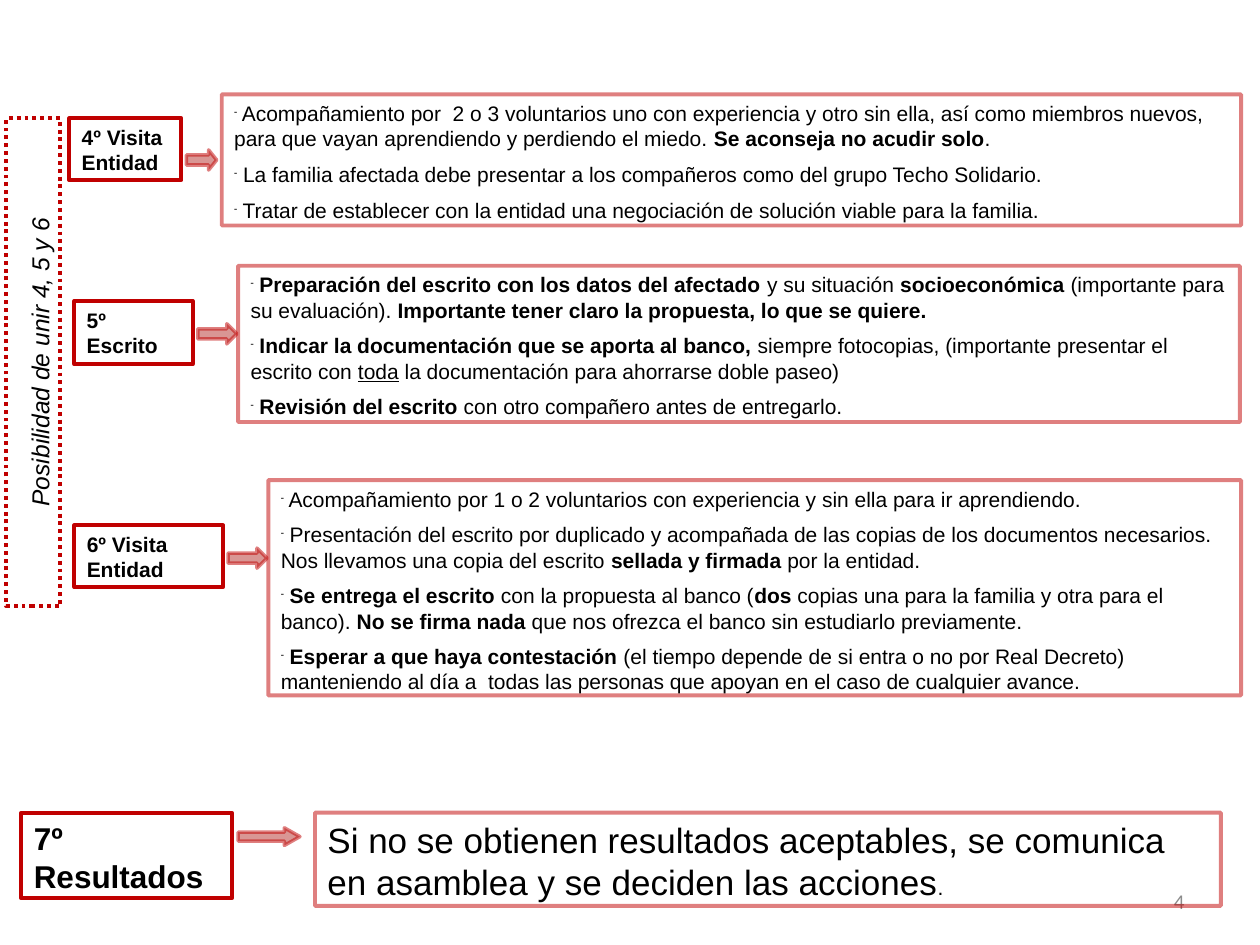
from dataclasses import dataclass
from itertools import groupby

from lxml import etree
from pptx import Presentation
from pptx import util as u
from pptx.dml.color import RGBColor
from pptx.enum import dml, shapes, text
from pptx.oxml.ns import qn

RED, PINK, BLACK, GREY = "C00000", "D99694", "000000", "8C8C8C"
BOLD, UNDERLINE, SMALL = "*", "_", "~"


@dataclass
class Area:
    left: float
    top: float
    width: float
    height: float

    def lengths(self) -> list:
        return [u.Inches(n) for n in (self.left, self.top, self.width, self.height)]


@dataclass
class Step:
    """A titled stage, its arrow and its explanation; * marks bold, _ underline, ~ small."""
    title: list[str]
    title_area: Area
    arrow_area: Area
    arrow_head: float
    details: list[str]
    details_area: Area
    title_size: int = 12
    details_size: int = 12
    title_gap: int = 0
    bulleted: bool = True


STEPS = [
    Step(["4º Visita Entidad"], Area(0.55, 0.94, 0.89, 0.49),
         Area(1.48, 1.19, 0.24, 0.16), 0.4,
         [" Acompañamiento por  2 o 3 voluntarios uno con experiencia y otro sin ella, así como "
          "miembros nuevos, para que vayan aprendiendo y perdiendo el miedo. "
          "*Se aconseja no acudir solo*.",
          " La familia afectada debe presentar a los compañeros como del grupo Techo Solidario.",
          " Tratar de establecer con la entidad una negociación de solución viable para la "
          "familia."],
         Area(1.76, 0.75, 8.09, 1.04), title_gap=3),
    Step(["5º", "Escrito"], Area(0.59, 2.39, 0.94, 0.5),
         Area(1.57, 2.57, 0.31, 0.16), 0.5,
         ["* Preparación del escrito con los datos del afectado *y su situación* socioeconómica *"
          "(importante para su evaluación).* Importante tener claro la propuesta, lo que se "
          "quiere.*",
          "* Indicar la documentación que se aporta al banco,* siempre fotocopias, (importante "
          "presentar el escrito con _toda_ la documentación para ahorrarse doble paseo)",
          "* Revisión del escrito* con otro compañero antes de entregarlo."],
         Area(1.89, 2.11, 7.95, 1.24)),
    Step(["6º Visita Entidad"], Area(0.59, 4.17, 1.18, 0.49),
         Area(1.81, 4.35, 0.31, 0.16), 0.5,
         [" Acompañamiento por 1 o 2 voluntarios con experiencia y sin ella para ir aprendiendo.",
          " Presentación del escrito por duplicado y acompañada de las copias de los documentos "
          "necesarios. Nos llevamos una copia del escrito *sellada y firmada *por la entidad.",
          "* Se entrega el escrito* con la propuesta al banco (*dos* copias una para la familia y "
          "otra para el banco). *No se firma nada *que nos ofrezca el banco sin estudiarlo "
          "previamente.",
          "* Esperar a que haya contestación* (el tiempo depende de si entra o no por Real "
          "Decreto) manteniendo al día a  todas las personas que apoyan en el caso de cualquier "
          "avance."],
         Area(2.13, 3.81, 7.72, 1.71)),
    Step(["7º Resultados"], Area(0.17, 6.45, 1.67, 0.68),
         Area(1.89, 6.57, 0.49, 0.14), 0.88,
         ["Si no se obtienen resultados aceptables, se comunica en asamblea y se deciden las "
          "acciones~.~"],
         Area(2.5, 6.45, 7.19, 0.74), title_size=18, details_size=20, bulleted=False),
]


def colour(value: str) -> RGBColor:
    return RGBColor.from_string(value)


def draw_shape(slide, kind, area: Area, width: float, fill: str = "", faded: bool = False):
    shape = slide.shapes.add_shape(kind, *area.lengths())
    shape.shadow.inherit = False
    if fill:
        shape.fill.solid()
        shape.fill.fore_color.rgb = colour(fill)
    else:
        shape.fill.background()
    shape.line.color.rgb = colour(RED)
    shape.line.width = u.Pt(width)
    if faded:
        rgb = shape.line._get_or_add_ln().find(".//" + qn("a:srgbClr"))
        etree.SubElement(rgb, qn("a:alpha"), val="50000")
    return shape


def add_marked_runs(paragraph, marked: str) -> None:
    """Turn each marker into a switch for the format of the runs after it."""
    active = set()
    for is_marker, group in groupby(marked, key=lambda c: c in (BOLD, UNDERLINE, SMALL)):
        content = "".join(group)
        if is_marker:
            active ^= set(content)
            continue
        run = paragraph.add_run()
        run.text = content
        if BOLD in active:
            run.font.bold = True
        if UNDERLINE in active:
            run.font.underline = True
        if SMALL in active:
            run.font.size = u.Pt(12)


def add_bullet(paragraph) -> None:
    properties = paragraph._p.get_or_add_pPr()
    properties.set("marL", "0")
    properties.set("indent", "0")
    size = etree.Element(qn("a:buSzPct"), val="45000")
    dash = etree.Element(qn("a:buChar"), char="-")
    properties.find(qn("a:spcAft")).addnext(size)
    size.addnext(dash)


def write(shape, lines: list[str], size: int, gap: int = 0, bulleted: bool = False,
          align=text.PP_ALIGN.LEFT, anchor=text.MSO_ANCHOR.TOP, bold: bool = False,
          italic: bool = False, font: str = "Arial", ink: str = BLACK) -> None:
    frame = shape.text_frame
    frame.word_wrap = True
    frame.vertical_anchor = anchor
    for index, line in enumerate(lines):
        paragraph = frame.add_paragraph() if index else frame.paragraphs[0]
        paragraph.alignment = align
        paragraph.space_after = u.Pt(gap)
        if bulleted:
            add_bullet(paragraph)
        paragraph.font.name = font
        paragraph.font.size = u.Pt(size)
        paragraph.font.color.rgb = colour(ink)
        if bold:
            paragraph.font.bold = True
        if italic:
            paragraph.font.italic = True
        add_marked_runs(paragraph, line)


def draw_step(slide, step: Step) -> None:
    rectangle = shapes.MSO_SHAPE.RECTANGLE
    title = draw_shape(slide, rectangle, step.title_area, 2.25)
    write(title, step.title, step.title_size, gap=step.title_gap, bold=True)
    arrow = draw_shape(slide, shapes.MSO_SHAPE.RIGHT_ARROW, step.arrow_area, 2, PINK, faded=True)
    arrow.adjustments[1] = step.arrow_head
    details = draw_shape(slide, rectangle, step.details_area, 2.25, faded=True)
    write(details, step.details, step.details_size, gap=6 if step.bulleted else 0,
          bulleted=step.bulleted)


def draw_joining_note(slide) -> None:
    note = draw_shape(slide, shapes.MSO_SHAPE.RECTANGLE, Area(0.05, 0.94, 0.43, 3.87), 2.25)
    note.line.dash_style = dml.MSO_LINE.ROUND_DOT
    write(note, ["Posibilidad de unir 4, 5 y 6"], 14, italic=True,
          align=text.PP_ALIGN.CENTER, anchor=text.MSO_ANCHOR.BOTTOM)
    note.text_frame._txBody.bodyPr.set("vert", "vert270")


def main() -> None:
    deck = Presentation()
    deck.slide_width, deck.slide_height = u.Inches(10), u.Inches(7.5)
    slide = deck.slides.add_slide(deck.slide_layouts[6])
    page_number = slide.shapes.add_textbox(*Area(7.17, 6.95, 2.33, 0.4).lengths())
    write(page_number, ["4"], 12, align=text.PP_ALIGN.RIGHT, anchor=text.MSO_ANCHOR.MIDDLE,
          font="Calibri", ink=GREY)
    for step in STEPS:
        draw_step(slide, step)
    draw_joining_note(slide)
    deck.save("out.pptx")


if __name__ == "__main__":
    main()
